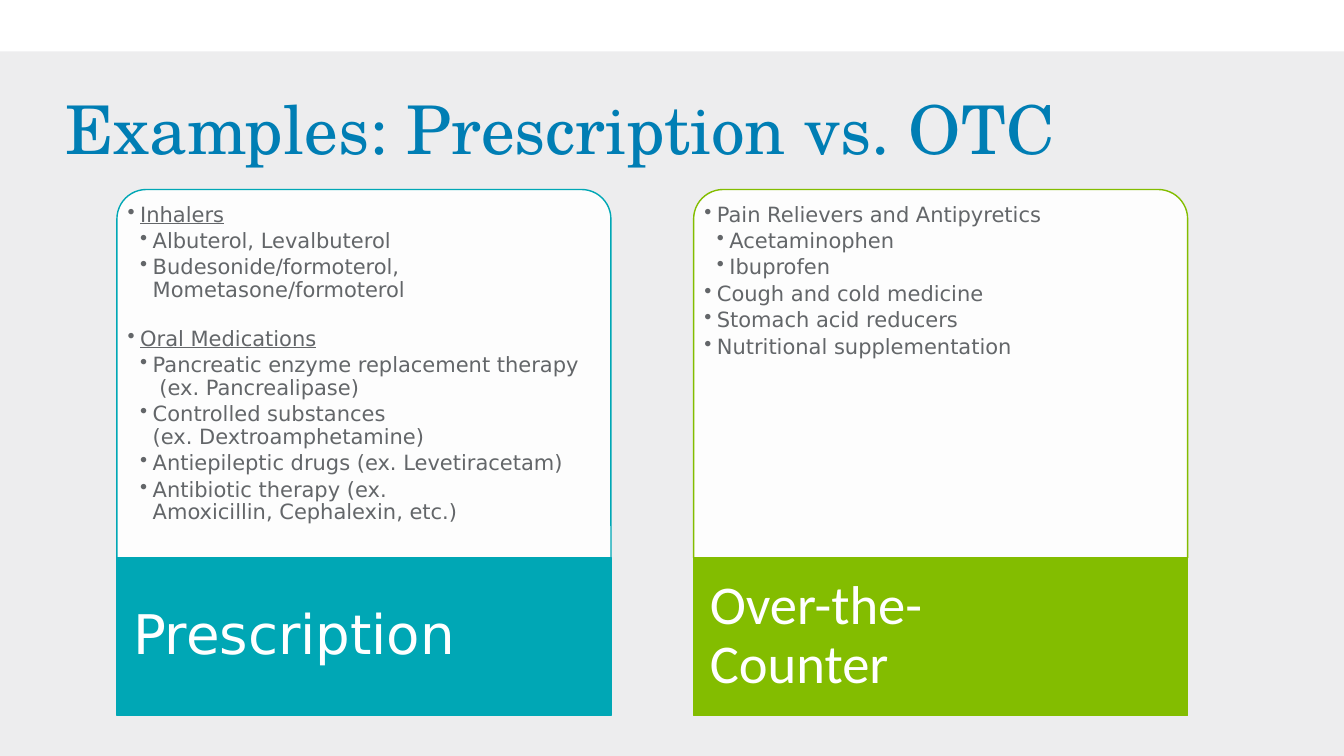
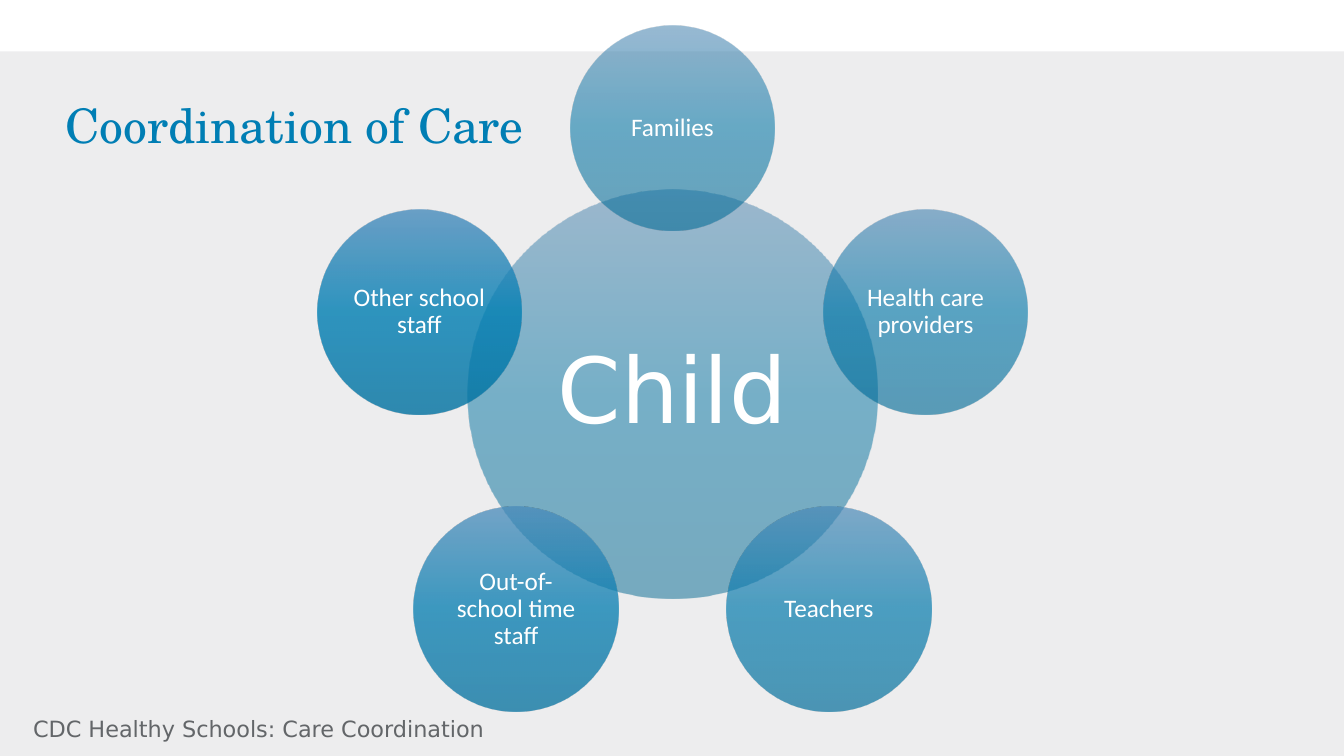
import copy
import math

import lxml.etree
import pptx
import pptx.dml.color
import pptx.enum.shapes
import pptx.enum.text
import pptx.oxml.ns
import pptx.util

Inches, Pt = pptx.util.Inches, pptx.util.Pt
SHAPE = pptx.enum.shapes.MSO_SHAPE
ANCHOR = pptx.enum.text.MSO_ANCHOR
ALIGN = pptx.enum.text.PP_ALIGN
qn = pptx.oxml.ns.qn

COLORS = {
    "page": "EDEDEE", "white": "FFFFFF", "title": "007EB4", "body": "636669",
    "teal": "00A7B5", "green": "83BD00",
}
FADE = [("4B83AD", "4B8DBD"), ("0072A2", "007FB4"), ("006690", "0071A0")]
SERIF, SANS, PLAIN = "TeX Gyre Schola", "DejaVu Sans", "Calibri"
WIDE, HIGH = 13.33, 7.5

RX = [
    (0, "Inhalers", True),
    (1, "Albuterol, Levalbuterol", False),
    (1, "Budesonide/formoterol, Mometasone/formoterol", False),
    (0, "Oral Medications", True),
    (1, "Pancreatic enzyme replacement therapy\n (ex. Pancrealipase)", False),
    (1, "Controlled substances\n(ex. Dextroamphetamine)", False),
    (1, "Antiepileptic drugs (ex. Levetiracetam)", False),
    (1, "Antibiotic therapy (ex.\nAmoxicillin, Cephalexin, etc.)", False),
]
OTC = [
    (0, "Pain Relievers and Antipyretics", False),
    (1, "Acetaminophen", False),
    (1, "Ibuprofen", False),
    (0, "Cough and cold medicine", False),
    (0, "Stomach acid reducers", False),
    (0, "Nutritional supplementation", False),
]
TEAM = ["Families", "Health care providers", "Teachers",
        "Out-of-school time staff", "Other school staff"]


def rgb(name):
    """Return the named colour."""
    return pptx.dml.color.RGBColor.from_string(COLORS[name])


def say(frame, text, size=15, font=SANS, color="body", under=False, align=None,
        line=0.9, before=0, after=0, level=None):
    """Add a paragraph to a frame; a level makes it a bullet."""
    para = frame.paragraphs[0]
    if para.runs:
        para = frame.add_paragraph()
    para.text = text
    para.alignment = align
    para.line_spacing = line
    para.space_before, para.space_after = Pt(before), Pt(after)
    if level is not None:
        para.level = level
        props = para._p.get_or_add_pPr()
        props.set("marL", str(Inches(0.125 * (level + 1))))
        props.set("indent", str(-Inches(0.125)))
        lxml.etree.SubElement(props, qn("a:buChar")).set("char", "•")
    for run in para.runs:
        run.font.name, run.font.size = font, Pt(size)
        run.font.color.rgb = rgb(color)
        run.font.underline = under
    for gap in para._p.findall(qn("a:br")):
        gap.append(copy.deepcopy(para.runs[0]._r.rPr))


def setup(frame, anchor, pads):
    """Set wrapping, anchor and insets of a frame."""
    frame.word_wrap = True
    frame.vertical_anchor = anchor
    (frame.margin_left, frame.margin_top,
     frame.margin_right, frame.margin_bottom) = map(Inches, pads)
    return frame


def shape(slide, kind, box, fill=None, edge=None):
    """Add a flat preset shape."""
    item = slide.shapes.add_shape(kind, *map(Inches, box))
    item.shadow.inherit = False
    if fill:
        item.fill.solid()
        item.fill.fore_color.rgb = rgb(fill)
    if edge:
        item.line.color.rgb = rgb(edge)
        item.line.width = Pt(1)
    else:
        item.line.fill.background()
    return item


def label(slide, box, text, anchor=ANCHOR.TOP, **style):
    """Add a text box with one paragraph."""
    item = slide.shapes.add_textbox(*map(Inches, box))
    say(setup(item.text_frame, anchor, (0.1, 0.05, 0.1, 0.05)), text, **style)


def page(deck, title, top, size, anchor):
    """Add a slide with the shared page colour, top band and title."""
    slide = deck.slides.add_slide(deck.slide_layouts[6])
    slide.background.fill.solid()
    slide.background.fill.fore_color.rgb = rgb("page")
    shape(slide, SHAPE.RECTANGLE, (0, 0, WIDE, 0.51), "white")
    label(slide, (0.55, top, 11.62, 1.13), title, anchor,
          size=size, font=SERIF, color="title")
    return slide


def panel(slide, box, items, name, font, color):
    """Draw a bullet card above its named band."""
    left, top, wide, high = box
    band = 0.3 * high
    card = shape(slide, SHAPE.ROUND_2_SAME_RECTANGLE,
                 (left, top, wide, high - band), "white", color)
    card.adjustments[0] = 0.08
    tint = card.fill._xPr.find(qn("a:solidFill"))[0]
    lxml.etree.SubElement(tint, qn("a:alpha")).set("val", "90000")
    frame = setup(card.text_frame, ANCHOR.TOP, (0.02, 0.06, 0.02, 0.02))
    for spot, (level, text, under) in enumerate(items):
        say(frame, text, under=under, level=level, after=2.6, align=ALIGN.LEFT,
            before=16 if under and spot else 0)
    base = shape(slide, SHAPE.RECTANGLE,
                 (left, top + high - band, wide, band), color, color)
    say(setup(base.text_frame, ANCHOR.MIDDLE, (0.16, 0, 1.5, 0)), name,
        size=39, font=font, color="white", align=ALIGN.LEFT)


def blend(pair, part):
    """Mix two hex colours."""
    ends = [bytes.fromhex(tone) for tone in pair]
    return "".join(f"{round(a + (b - a) * part):02X}" for a, b in zip(*ends))


def disc(slide, x, y, wide, text, step, pad, **style):
    """Draw a clear, graded circle about a centre."""
    item = shape(slide, SHAPE.OVAL, (x - wide / 2, y - wide / 2, wide, wide))
    item.fill.gradient()
    grad = item.fill._xPr.find(qn("a:gradFill"))
    stops = grad.find(qn("a:gsLst"))
    for old in list(stops):
        stops.remove(old)
    for place, pair in zip((0, 50, 100), FADE):
        stop = lxml.etree.SubElement(stops, qn("a:gs"), pos=str(place * 1000))
        tone = lxml.etree.SubElement(stop, qn("a:srgbClr"), val=blend(pair, step / 5))
        lxml.etree.SubElement(tone, qn("a:alpha"), val=str(50000 + 6000 * step))
    grad.find(qn("a:lin")).set("ang", "5400000")
    say(setup(item.text_frame, ANCHOR.MIDDLE, [pad] * 4), text,
        color="white", align=ALIGN.CENTER, **style)


def ring(slide, box):
    """Draw the child circle with the team spaced evenly around it."""
    left, top, size = box
    x, y, reach = left + size / 2, top + size / 2, 0.65 * size
    disc(slide, x, y, size, "Child", 0, 0.09, size=65)
    for spot, name in enumerate(TEAM):
        turn = math.tau * spot / len(TEAM)
        disc(slide, x + reach * math.sin(turn), y - reach * math.cos(turn),
             size / 2, name, spot + 1, 0.03, size=18, font=PLAIN)


def main():
    """Build and save the deck."""
    deck = pptx.Presentation()
    deck.slide_width, deck.slide_height = Inches(WIDE), Inches(HIGH)

    slide = page(deck, "Examples: Prescription vs. OTC", 0.75, 48, ANCHOR.MIDDLE)
    panels = [(RX, "Prescription", SANS, "teal"),
              (OTC, "Over-the-Counter", PLAIN, "green")]
    for spot, parts in enumerate(panels):
        panel(slide, (1.16 + 5.72 * spot, 1.88, 4.9, 5.22), *parts)

    slide = page(deck, "Coordination of Care", 0.97, 34, ANCHOR.TOP)
    ring(slide, (4.64, 1.88, 4.06))
    label(slide, (0.23, 7.05, 4.93, 0.37),
          "CDC Healthy Schools: Care Coordination", size=16, line=1)
    deck.save("out.pptx")


if __name__ == "__main__":
    main()
